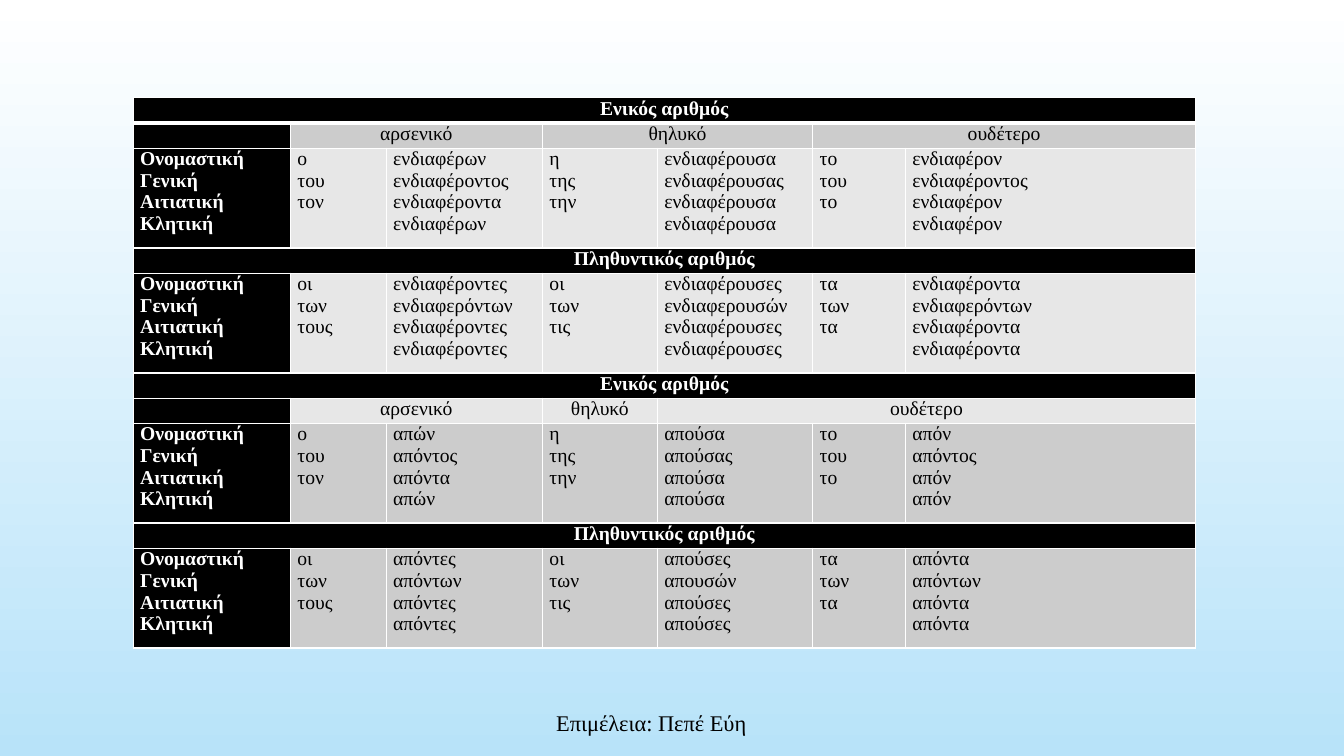
from lxml import etree
from pptx import Presentation
from pptx.dml.color import RGBColor
from pptx.enum.text import MSO_ANCHOR, PP_ALIGN
from pptx.oxml.ns import qn
from pptx.util import Inches, Pt

COLORS = {"white": "FFFFFF", "black": "000000", "sky": "B8E3F9",
          "gray": "CCCCCC", "pale": "E7E7E7"}
FONT = "Times New Roman"
COLUMN_WIDTHS = [1.56, 0.95, 1.55, 1.14, 1.54, 0.92, 2.88]
LINE_ROW, CASE_ROW = 0.25, 0.99

CASES = "Ονομαστική Γενική Αιτιατική Κλητική"
SINGULAR = ["ο του τον", "η της την", "το του το"]
PLURAL = ["οι των τους", "οι των τις", "τα των τα"]
GENDERS = ["αρσενικό", "θηλυκό", "ουδέτερο"]

# Each participle: gender spans, gender fill, form fill, singular and plural forms
PARTICIPLES = [
    ([2, 2, 2], "gray", "pale",
     ["ενδιαφέρων ενδιαφέροντος ενδιαφέροντα ενδιαφέρων",
      "ενδιαφέρουσα ενδιαφέρουσας ενδιαφέρουσα ενδιαφέρουσα",
      "ενδιαφέρον ενδιαφέροντος ενδιαφέρον ενδιαφέρον"],
     ["ενδιαφέροντες ενδιαφερόντων ενδιαφέροντες ενδιαφέροντες",
      "ενδιαφέρουσες ενδιαφερουσών ενδιαφέρουσες ενδιαφέρουσες",
      "ενδιαφέροντα ενδιαφερόντων ενδιαφέροντα ενδιαφέροντα"]),
    ([2, 1, 3], "pale", "gray",
     ["απών απόντος απόντα απών",
      "απούσα απούσας απούσα απούσα",
      "απόν απόντος απόν απόν"],
     ["απόντες απόντων απόντες απόντες",
      "απούσες απουσών απούσες απούσες",
      "απόντα απόντων απόντα απόντα"]),
]


def write(para, text, size, color, bold=False):
    para.text = text
    for span in para.runs:
        for name, value in {"name": FONT, "size": Pt(size), "bold": bold}.items():
            setattr(span.font, name, value)
        span.font.color.rgb = RGBColor.from_string(COLORS[color])


def style_cell(cell, fill, top, bottom):
    """Set margins, white borders (widths in points) and fill of a table cell."""
    for name, value in {"margin_left": Inches(0.07), "margin_right": Inches(0.07),
                        "margin_top": 0, "margin_bottom": 0}.items():
        setattr(cell, name, value)
    properties = cell._tc.get_or_add_tcPr()
    for side, width in {"lnL": 1, "lnR": 1, "lnT": top, "lnB": bottom}.items():
        line = etree.SubElement(properties, qn(f"a:{side}"), w=str(Pt(width)))
        solid = etree.SubElement(line, qn("a:solidFill"))
        etree.SubElement(solid, qn("a:srgbClr"), val=COLORS["white"])
    cell.fill.solid()
    cell.fill.fore_color.rgb = RGBColor.from_string(COLORS[fill])


deck = Presentation()
deck.slide_width, deck.slide_height = Inches(13.33), Inches(7.5)
page = deck.slides.add_slide(deck.slide_layouts[6])

backdrop = page.background.fill
backdrop.gradient()
backdrop.gradient_angle = 270
for stop, color in zip(backdrop.gradient_stops, ["white", "sky"]):
    stop.color.rgb = RGBColor.from_string(COLORS[color])
for stop, position in zip(backdrop.gradient_stops, [0, 1]):
    stop.position = position

# Each row: height, fill of its body, and its entries as (text, columns covered)
rows = []
for spans, gender_fill, form_fill, singular, plural in PARTICIPLES:
    for number, articles, forms in [("Ενικός αριθμός", SINGULAR, singular),
                                    ("Πληθυντικός αριθμός", PLURAL, plural)]:
        rows.append((LINE_ROW, "black", [(number, 7)]))
        if forms is singular:
            rows.append((LINE_ROW, gender_fill, [("", 1), *zip(GENDERS, spans)]))
        entries = [(CASES, 1)]
        for article, form in zip(articles, forms):
            entries += [(article, 1), (form, 1)]
        rows.append((CASE_ROW, form_fill, entries))

table = page.shapes.add_table(
    len(rows), len(COLUMN_WIDTHS), Inches(1.32), Inches(0.97),
    Inches(sum(COLUMN_WIDTHS)), Inches(sum(row[0] for row in rows))).table
for column, width in zip(table.columns, COLUMN_WIDTHS):
    column.width = Inches(width)

for row_index, (height, fill, entries) in enumerate(rows):
    table.rows[row_index].height = Inches(height)
    for column_index in range(len(COLUMN_WIDTHS)):
        cell = table.cell(row_index, column_index)
        style_cell(cell, fill if column_index else "black",
                   3 if row_index == 1 else 1, 3 if row_index == 0 else 1)
        end = cell.text_frame.paragraphs[0]._p.get_or_add_endParaRPr()
        end.set("sz", "1400")
    column_index = 0
    for text, covered in entries:
        cell = table.cell(row_index, column_index)
        if covered > 1:
            cell.merge(table.cell(row_index, column_index + covered - 1))
        para = cell.text_frame.paragraphs[0]
        header = column_index == 0
        if height == CASE_ROW:
            text = text.replace(" ", "\v")
        else:
            para.alignment = PP_ALIGN.CENTER
        if text:
            write(para, text, 14, "white" if header else "black", header)
        column_index += covered

credit = page.shapes.add_textbox(Inches(2.81), Inches(6.97), Inches(7.3), Inches(0.4))
frame = credit.text_frame
frame.word_wrap = True
frame.vertical_anchor = MSO_ANCHOR.MIDDLE
frame.paragraphs[0].alignment = PP_ALIGN.CENTER
write(frame.paragraphs[0], "Επιμέλεια: Πεπέ Εύη", 16, "black")

deck.save("out.pptx")
